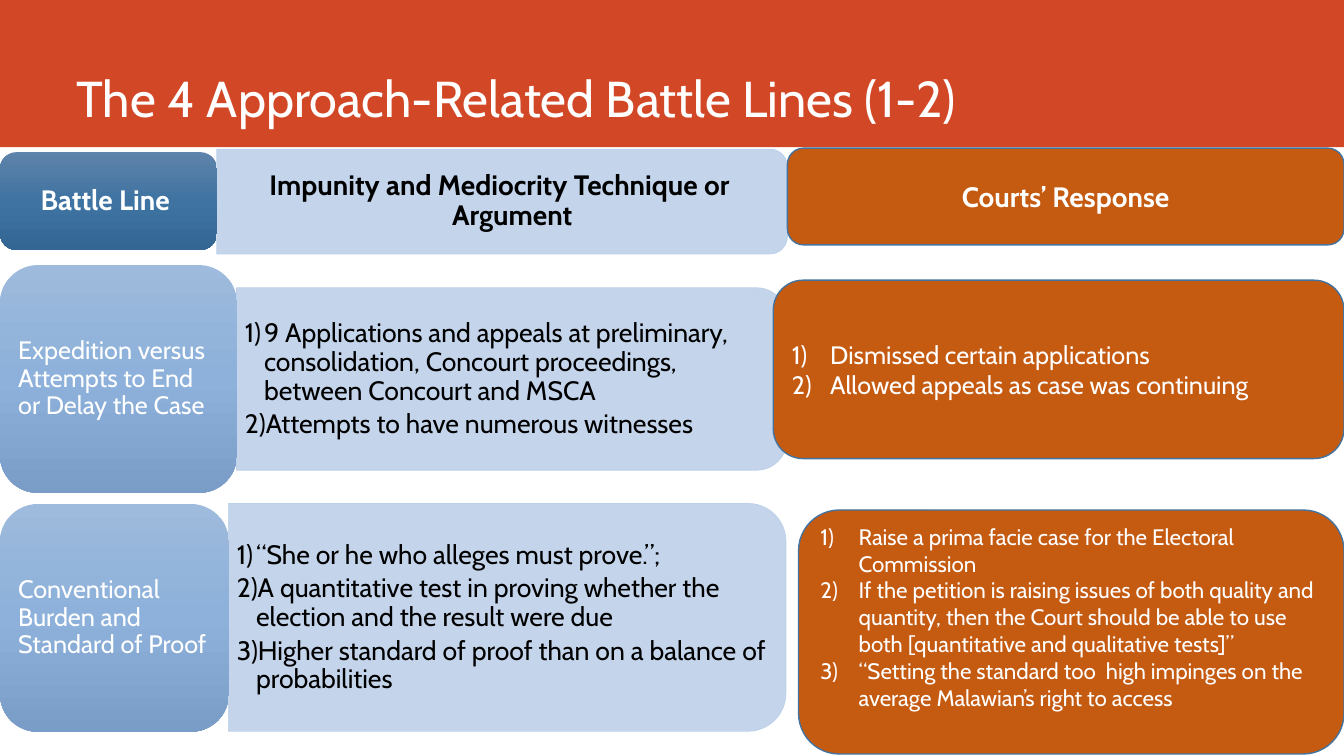
from lxml import etree
from pptx import Presentation
from pptx.dml.color import RGBColor
from pptx.enum.shapes import MSO_SHAPE
from pptx.enum.text import MSO_ANCHOR, PP_ALIGN
from pptx.oxml.ns import qn
from pptx.util import Emu, Pt

PX = 9144
FONT = "Cabin"
RECT = MSO_SHAPE.RECTANGLE
ROUNDED = MSO_SHAPE.ROUNDED_RECTANGLE
TOP_ROUNDED = MSO_SHAPE.ROUND_2_SAME_RECTANGLE
PROCESS = MSO_SHAPE.FLOWCHART_ALTERNATE_PROCESS
LEFT, CENTER = PP_ALIGN.LEFT, PP_ALIGN.CENTER
MIDDLE, BOTTOM = MSO_ANCHOR.MIDDLE, MSO_ANCHOR.BOTTOM

COLORS = {
    "banner": "D24726",
    "panel": "BDD0E9",
    "response": "C55A11",
    "response_line": "43739E",
    "white": "FFFFFF",
    "black": "000000",
}
HEADER_BLUES = ("5F83AA", "3F73A2", "346694")
ROW_BLUES = ("9EBADC", "8DB1DA", "799DC6")

HEADER = {
    "label": ((0, 151, 215, 97), "Battle Line "),
    "technique": ((215, 148, 566, 104),
                  ["Impunity and Mediocrity Technique or Argument"]),
    "response": ((781, 147, 552, 96), ["Courts’ Response"]),
}
ROWS = [
    {
        "label": ((0, 263, 235, 226),
                  "Expedition versus Attempts to End or Delay the Case"),
        "technique": ((235, 286, 546, 181), [
            "9 Applications and appeals at preliminary, consolidation, "
            "Concourt proceedings, between Concourt and MSCA",
            "Attempts to have numerous witnesses",
        ]),
        "response": ((767, 278, 566, 177), [
            "Dismissed certain applications",
            "Allowed appeals as case was continuing",
        ]),
        "response_format": {"size": 18},
    },
    {
        "label": ((0, 500, 227, 226),
                  "Conventional Burden and Standard of Proof"),
        "technique": ((227, 500, 553, 226), [
            "“She or he who alleges must prove.”;",
            "A quantitative test in proving whether the election and the "
            "result were due",
            "Higher standard of proof than on a balance of probabilities",
        ]),
        "response": ((792, 506, 541, 242), [
            "Raise a prima facie case for the Electoral Commission",
            "If the petition is raising issues of both quality and quantity, "
            "then the Court should be able to use both [quantitative and "
            "qualitative tests]”",
            "“Setting the standard too  high impinges on the average "
            "Malawian’s right to access",
        ]),
        "response_format": {"size": 16, "insets": (10, 5, 10, 35)},
    },
]


def emu(*lengths):
    return [Emu(length * PX) for length in lengths]


def rgb(name):
    return RGBColor.from_string(COLORS[name])


def write(holder, paragraphs, size, color="white", bold=False, align=LEFT,
          anchor=MIDDLE, insets=(10, 5, 10, 5), line_spacing=1.0,
          space_after=0, hanging=0, numbered=False):
    frame = holder.text_frame
    frame.word_wrap = True
    frame.vertical_anchor = anchor
    (frame.margin_left, frame.margin_top,
     frame.margin_right, frame.margin_bottom) = emu(*insets)
    for index, text in enumerate(paragraphs):
        paragraph = frame.add_paragraph() if index else frame.paragraphs[0]
        paragraph.alignment = align
        paragraph.line_spacing = line_spacing
        paragraph.space_after = Pt(space_after)
        run = paragraph.add_run()
        run.text = text
        run.font.name, run.font.size, run.font.bold = FONT, Pt(size), bold
        run.font.color.rgb = rgb(color)
        properties = paragraph._p.get_or_add_pPr()
        if hanging:
            properties.set("marL", str(hanging * PX))
            properties.set("indent", str(-hanging * PX))
        if numbered:
            etree.SubElement(properties, qn("a:buFont"), typeface="+mj-lt")
            etree.SubElement(properties, qn("a:buAutoNum"), type="arabicParenR")


def add_block(slide, kind, box, fill=None, line=None, line_width=1):
    block = slide.shapes.add_shape(kind, *emu(*box))
    block.shadow.inherit = False
    if fill:
        block.fill.solid()
        block.fill.fore_color.rgb = rgb(fill)
    if line:
        block.line.color.rgb = rgb(line)
        block.line.width = Pt(line_width)
    else:
        block.line.fill.background()
    return block


def add_title(slide, box, text):
    x, y, width, height = box
    add_block(slide, RECT, box, "banner")
    title = slide.shapes.add_textbox(*emu(x + 66, y + 24, width - 157, height - 38))
    write(title, [text], 36, anchor=BOTTOM, line_spacing=0.9)


def add_technique(slide, box, paragraphs, **text_format):
    x, y, width, height = box
    turned = (x + (width - height) // 2, y + (height - width) // 2, height, width)
    panel = add_block(slide, TOP_ROUNDED, turned, "panel", "panel", 0.5)
    panel.rotation = 90
    shade = panel._element.spPr.find(qn("a:solidFill"))[0]
    etree.SubElement(shade, qn("a:alpha"), val="90000")
    corner = round(height * 0.049)
    argument = slide.shapes.add_textbox(
        *emu(x, y + corner, width - corner, height - 2 * corner))
    write(argument, paragraphs, color="black", line_spacing=0.9,
          space_after=3.5, **text_format)


def add_label(slide, box, text, blues, **text_format):
    label = add_block(slide, ROUNDED, box)
    label.fill.gradient()
    label.fill.gradient_angle = 270
    stops = label._element.spPr.find(qn("a:gradFill")).find(qn("a:gsLst"))
    for stop in list(stops):
        stops.remove(stop)
    for index, blue in enumerate(blues):
        stop = etree.SubElement(stops, qn("a:gs"), pos=str(index * 50000))
        etree.SubElement(stop, qn("a:srgbClr"), val=blue)
    write(label, [text], insets=(7, 4, 7, 4), line_spacing=0.9, **text_format)


def add_response(slide, box, paragraphs, **text_format):
    response = add_block(slide, PROCESS, box, "response", "response_line")
    write(response, paragraphs, **text_format)


def add_header(slide, header):
    heading = {"size": 20, "bold": True, "align": CENTER}
    add_technique(slide, *header["technique"], insets=(12, 6, 12, 6),
                  hanging=25, **heading)
    add_label(slide, *header["label"], HEADER_BLUES, **heading)
    add_response(slide, *header["response"], **heading)


def add_row(slide, row):
    add_technique(slide, *row["technique"], size=19, insets=(8, 4, 8, 4),
                  hanging=19, numbered=True)
    add_label(slide, *row["label"], ROW_BLUES, size=18)
    add_response(slide, *row["response"], hanging=38, numbered=True,
                 **row["response_format"])


def main():
    deck = Presentation()
    deck.slide_width, deck.slide_height = emu(1333, 750)
    slide = deck.slides.add_slide(deck.slide_layouts[6])
    add_title(slide, (0, 0, 1333, 146), "The 4 Approach-Related Battle Lines (1-2)")
    add_header(slide, HEADER)
    for row in ROWS:
        add_row(slide, row)
    deck.save("out.pptx")


if __name__ == "__main__":
    main()
